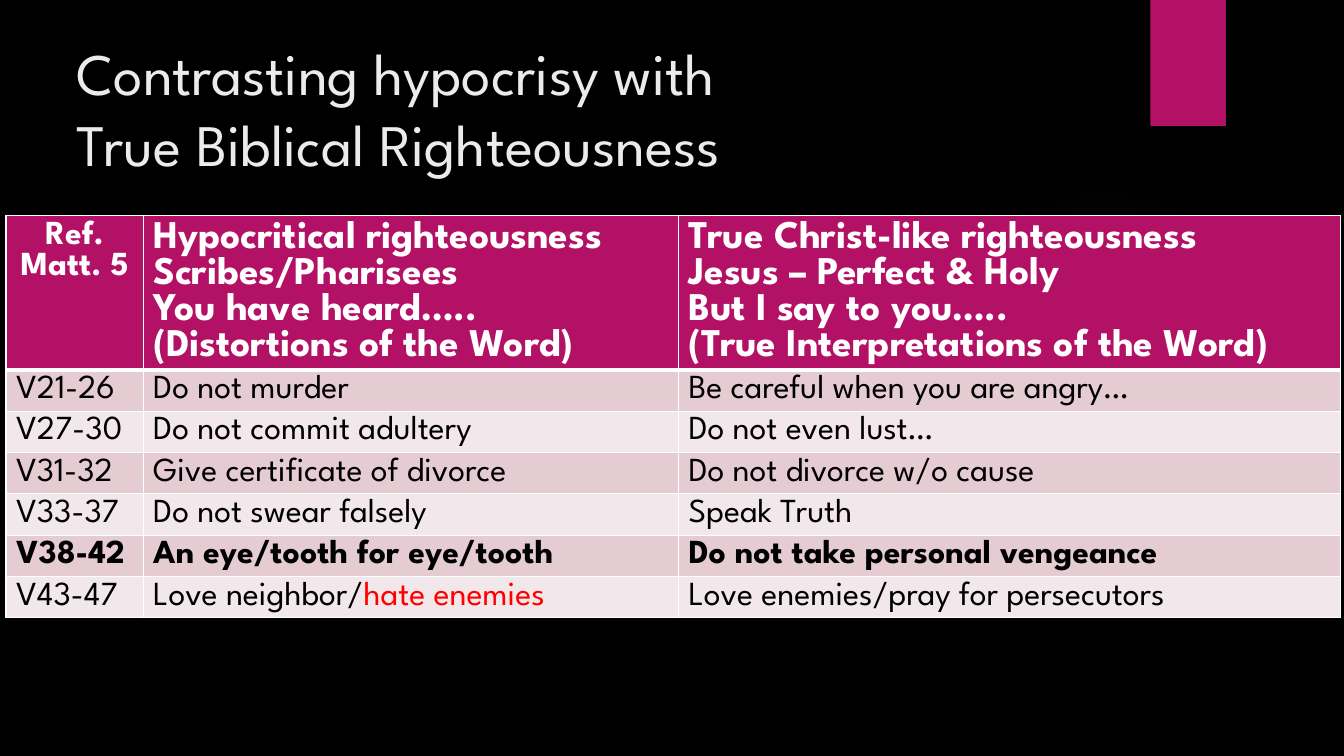
from dataclasses import dataclass

from lxml import etree
from pptx import Presentation
from pptx.dml.color import RGBColor
from pptx.enum.shapes import MSO_SHAPE
from pptx.enum.text import MSO_ANCHOR, MSO_AUTO_SIZE, PP_ALIGN
from pptx.oxml.ns import qn
from pptx.util import Inches, Pt

LEFT, CENTER = PP_ALIGN.LEFT, PP_ALIGN.CENTER
BOTTOM, NO_FIT = MSO_ANCHOR.BOTTOM, MSO_AUTO_SIZE.NONE
OVAL, RECTANGLE = MSO_SHAPE.OVAL, MSO_SHAPE.RECTANGLE

FONT = "League Spartan"
BLACK, WHITE, RED = "000000", "FFFFFF", "FF0000"
MAGENTA, TITLE_GRAY, GLOW = "B31166", "EBEBEB", "9B6BF2"
BANDS = ("E5CCD3", "F2E7EA")
GLOW_STOPS = ((0, 7), (36, 6), (69, 0))  # position and opacity, percent
COLUMNS = (1.36, 5.31, 6.57)
HEADER_HEIGHT, ROW_HEIGHT = 1.53, 0.41


@dataclass
class Header:
    lines: tuple[str, ...]
    size: int = 28
    align: PP_ALIGN = LEFT


@dataclass
class Verse:
    ref: str
    heard: str
    say: str
    bold: bool = False
    red: str = ""


HEADERS = (
    Header(("Ref.", "Matt. 5"), 24, CENTER),
    Header(("Hypocritical righteousness", "Scribes/Pharisees",
            "You have heard…..", "(Distortions of the Word)")),
    Header(("True Christ-like righteousness", "Jesus – Perfect & Holy",
            "But I say to you…..", "(True Interpretations of the Word)")),
)
VERSES = (
    Verse("V21-26", "Do not murder", "Be careful when you are angry…"),
    Verse("V27-30", "Do not commit adultery", "Do not even lust…"),
    Verse("V31-32", "Give certificate of divorce", "Do not divorce w/o cause"),
    Verse("V33-37", "Do not swear falsely", "Speak Truth"),
    Verse("V38-42", "An eye/tooth for eye/tooth",
          "Do not take personal vengeance", bold=True),
    Verse("V43-47", "Love neighbor/", "Love enemies/pray for persecutors",
          red="hate enemies"),
)


def rgb(color: str) -> RGBColor:
    return RGBColor.from_string(color)


def add_run(p, text: str, size: int, color: str, bold: bool = False) -> None:
    r = p.add_run()
    r.text = text
    r.font.name, r.font.size, r.font.bold = FONT, Pt(size), bold
    r.font.color.rgb = rgb(color)


def add_plain_shape(slide, kind: MSO_SHAPE, x: float, y: float,
                    w: float, h: float, color: str):
    sp = slide.shapes.add_shape(kind, Inches(x), Inches(y), Inches(w), Inches(h))
    sp.shadow.inherit = False
    sp.fill.solid()
    sp.fill.fore_color.rgb = rgb(color)
    sp.line.fill.background()
    return sp


def set_glow(sp) -> None:
    grad = etree.Element(qn("a:gradFill"), rotWithShape="1")
    stops = etree.SubElement(grad, qn("a:gsLst"))
    for pos, opacity in GLOW_STOPS:
        gs = etree.SubElement(stops, qn("a:gs"), pos=str(pos * 1000))
        clr = etree.SubElement(gs, qn("a:srgbClr"), val=GLOW)
        etree.SubElement(clr, qn("a:alpha"), val=str(opacity * 1000))
    radial = etree.SubElement(grad, qn("a:path"), path="circle")
    etree.SubElement(radial, qn("a:fillToRect"),
                     {side: "50000" for side in "ltrb"})
    spPr = sp.fill._xPr
    spPr.replace(spPr.find(qn("a:solidFill")), grad)


def style_cell(cell, color: str, bottom: int = 1, top: int = 1) -> None:
    cell.fill.solid()
    cell.fill.fore_color.rgb = rgb(color)
    tcPr = cell._tc.get_or_add_tcPr()
    widths = {"a:lnL": 1, "a:lnR": 1, "a:lnT": top, "a:lnB": bottom}
    for i, (tag, width) in enumerate(widths.items()):
        ln = etree.Element(qn(tag), w=str(Pt(width)))
        fill = etree.SubElement(ln, qn("a:solidFill"))
        etree.SubElement(fill, qn("a:srgbClr"), val=WHITE)
        tcPr.insert(i, ln)


def add_title(slide) -> None:
    title = slide.shapes.title
    title.left, title.top = Inches(0.66), Inches(0.29)
    title.width, title.height = Inches(10.29), Inches(1.53)
    tf = title.text_frame
    tf.word_wrap, tf.auto_size, tf.vertical_anchor = True, NO_FIT, BOTTOM
    p = tf.paragraphs[0]
    p.alignment, p.line_spacing = LEFT, Pt(50.7)
    add_run(p, "Contrasting hypocrisy with", 42, TITLE_GRAY)
    p.add_line_break()
    add_run(p, "True Biblical Righteousness", 42, TITLE_GRAY)


def add_comparison(slide) -> None:
    height = HEADER_HEIGHT + ROW_HEIGHT * len(VERSES)
    table = slide.shapes.add_table(
        len(VERSES) + 1, len(COLUMNS), Inches(0.06), Inches(2.14),
        Inches(sum(COLUMNS)), Inches(height)).table
    for column, width in zip(table.columns, COLUMNS):
        column.width = Inches(width)
    for i, row in enumerate(table.rows):
        row.height = Inches(ROW_HEIGHT if i else HEADER_HEIGHT)

    # Header row
    for col, header in enumerate(HEADERS):
        cell = table.cell(0, col)
        style_cell(cell, MAGENTA, bottom=3)
        tf = cell.text_frame
        for i, line in enumerate(header.lines):
            p = tf.add_paragraph() if i else tf.paragraphs[0]
            p.alignment = header.align
            add_run(p, line, header.size, WHITE, bold=True)

    # Verse rows
    for row, verse in enumerate(VERSES, start=1):
        for col, text in enumerate((verse.ref, verse.heard, verse.say)):
            cell = table.cell(row, col)
            style_cell(cell, BANDS[(row - 1) % 2], top=3 if row == 1 else 1)
            p = cell.text_frame.paragraphs[0]
            add_run(p, text, 24, BLACK, verse.bold)
            if verse.red and col == 1:
                add_run(p, verse.red, 24, RED, verse.bold)


def main() -> None:
    prs = Presentation()
    prs.slide_width, prs.slide_height = Inches(13.33), Inches(7.5)
    slide = prs.slides.add_slide(prs.slide_layouts[5])
    slide.background.fill.solid()
    slide.background.fill.fore_color.rgb = rgb(BLACK)

    # Backdrop
    set_glow(add_plain_shape(slide, OVAL, 9.41, 1.83, 3.08, 3.08, GLOW))
    add_plain_shape(slide, RECTANGLE, 11.41, 0, 0.75, 1.25, MAGENTA)

    # Content
    add_title(slide)
    add_comparison(slide)
    prs.save("out.pptx")


if __name__ == "__main__":
    main()
